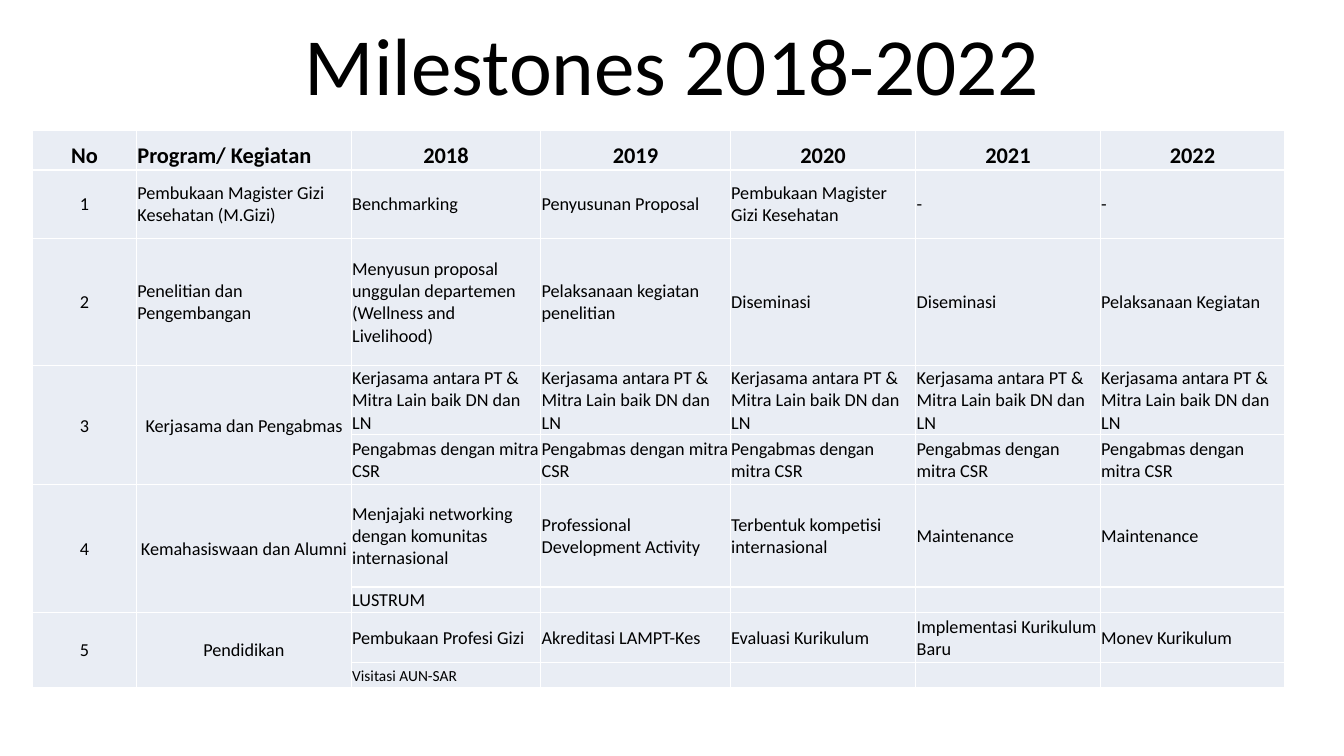
"""Build the Milestones 2018-2022 programme table slide."""
from dataclasses import dataclass

from lxml.etree import SubElement
from pptx import Presentation
from pptx.dml.color import RGBColor
from pptx.enum.text import MSO_ANCHOR, PP_ALIGN
from pptx.oxml.ns import qn
from pptx.slide import Slide
from pptx.table import Table, _Cell
from pptx.text.text import _Paragraph
from pptx.util import Pt

FONT = "Calibri"
BLACK = "000000"
WHITE = "FFFFFF"
CELL_FILL = "E9EDF4"
BODY_SIZE = 13
YEARS = range(2018, 2023)
COLUMN_WIDTHS = [74.2, 153.4, 135.4, 135.4, 132.5, 131.8, 131.8]
HEADER_HEIGHT = 28


@dataclass(frozen=True)
class Activity:
    """One table row of yearly activities."""
    height: float
    yearly: list[str]
    size: float = BODY_SIZE


@dataclass(frozen=True)
class Program:
    """A numbered programme with one or more activity rows."""
    name: str
    activities: list[Activity]
    alignment: PP_ALIGN = PP_ALIGN.LEFT


PROGRAMS = [
    Program("Pembukaan Magister Gizi Kesehatan (M.Gizi)", [
        Activity(49, ["Benchmarking", "Penyusunan Proposal",
                      "Pembukaan Magister Gizi Kesehatan", "-", "-"]),
    ]),
    Program("Penelitian dan Pengembangan", [
        Activity(91, ["Menyusun proposal unggulan departemen (Wellness and Livelihood)",
                      "Pelaksanaan kegiatan penelitian", "Diseminasi", "Diseminasi",
                      "Pelaksanaan Kegiatan"]),
    ]),
    Program("Kerjasama dan Pengabmas", [
        Activity(49, ["Kerjasama antara PT & Mitra Lain baik DN dan LN"] * len(YEARS)),
        Activity(36, ["Pengabmas dengan mitra CSR"] * len(YEARS)),
    ], PP_ALIGN.CENTER),
    Program("Kemahasiswaan dan Alumni", [
        Activity(73, ["Menjajaki networking dengan komunitas internasional",
                      "Professional Development Activity",
                      "Terbentuk kompetisi internasional", "Maintenance", "Maintenance"]),
        Activity(18, ["LUSTRUM", "", "", "", ""]),
    ], PP_ALIGN.CENTER),
    Program("Pendidikan", [
        Activity(36, ["Pembukaan Profesi Gizi", "Akreditasi LAMPT-Kes", "Evaluasi Kurikulum",
                      "Implementasi Kurikulum Baru", "Monev Kurikulum"]),
        Activity(18, ["Visitasi AUN-SAR", "", "", "", ""], 11),
    ], PP_ALIGN.CENTER),
]


def color(value: str) -> RGBColor:
    """Turn a hex string into a colour."""
    return RGBColor.from_string(value)


def format_runs(paragraph: _Paragraph, size: float, bold: bool = False) -> None:
    """Give all runs of a paragraph the slide font."""
    for run in paragraph.runs:
        run.font.name = FONT
        run.font.size = Pt(size)
        run.font.bold = bold
        run.font.color.rgb = color(BLACK)


def style_cell(cell: _Cell) -> None:
    """Set the borders, fill, margins and empty-text size of a cell."""
    properties = cell._tc.get_or_add_tcPr()
    for side in ("lnL", "lnR", "lnT", "lnB"):
        line = SubElement(properties, qn(f"a:{side}"), w=str(Pt(1)))
        solid = SubElement(line, qn("a:solidFill"))
        SubElement(solid, qn("a:srgbClr"), val=WHITE)
    cell.fill.solid()
    cell.fill.fore_color.rgb = color(CELL_FILL)
    cell.margin_left = cell.margin_right = cell.margin_top = Pt(0.7)
    cell.margin_bottom = Pt(0)
    cell.vertical_anchor = MSO_ANCHOR.MIDDLE
    paragraph = cell.text_frame.paragraphs[0]
    SubElement(paragraph._p, qn("a:endParaRPr"), sz=str(BODY_SIZE * 100))


def write_cell(cell: _Cell, text: str, alignment: PP_ALIGN = PP_ALIGN.LEFT,
               size: float = BODY_SIZE, bold: bool = False) -> None:
    """Write formatted text into a cell."""
    if not text:
        return
    paragraph = cell.text_frame.paragraphs[0]
    paragraph.text = text
    paragraph.alignment = alignment
    format_runs(paragraph, size, bold)


def add_title(slide: Slide) -> None:
    """Add the centred slide title."""
    frame = slide.shapes.add_textbox(Pt(48), Pt(0), Pt(864), Pt(90)).text_frame
    frame.word_wrap = True
    frame.vertical_anchor = MSO_ANCHOR.MIDDLE
    frame.text = "Milestones 2018-2022"
    paragraph = frame.paragraphs[0]
    paragraph.alignment = PP_ALIGN.CENTER
    format_runs(paragraph, 58)


def fill_header(table: Table) -> None:
    """Write the heading row."""
    headings = ["No", "Program/ Kegiatan", *map(str, YEARS)]
    for column, heading in enumerate(headings):
        cell = table.cell(0, column)
        alignment = PP_ALIGN.LEFT if column == 1 else PP_ALIGN.CENTER
        write_cell(cell, heading, alignment, 16, True)
        cell.vertical_anchor = MSO_ANCHOR.BOTTOM


def fill_programs(table: Table) -> None:
    """Write the programmes and merge their number and name cells."""
    row = 1
    for number, program in enumerate(PROGRAMS, start=1):
        last_row = row + len(program.activities) - 1
        if last_row > row:
            for column in (0, 1):
                table.cell(row, column).merge(table.cell(last_row, column))
        write_cell(table.cell(row, 0), str(number), PP_ALIGN.CENTER)
        write_cell(table.cell(row, 1), program.name, program.alignment)
        for activity in program.activities:
            for column, text in enumerate(activity.yearly, start=2):
                write_cell(table.cell(row, column), text, size=activity.size)
            row += 1


def add_milestones(slide: Slide) -> None:
    """Add the milestone table."""
    heights = [HEADER_HEIGHT] + [
        activity.height for program in PROGRAMS for activity in program.activities]
    table = slide.shapes.add_table(
        len(heights), len(COLUMN_WIDTHS), Pt(23.3), Pt(93.4),
        Pt(sum(COLUMN_WIDTHS)), Pt(sum(heights))).table
    table.first_row = False
    table.horz_banding = False
    for column, width in zip(table.columns, COLUMN_WIDTHS):
        column.width = Pt(width)
    for row, height in zip(table.rows, heights):
        row.height = Pt(height)
    for cell in table.iter_cells():
        style_cell(cell)
    fill_header(table)
    fill_programs(table)


def main() -> None:
    """Create and save the presentation."""
    presentation = Presentation()
    presentation.slide_width = Pt(960)
    presentation.slide_height = Pt(540)
    slide = presentation.slides.add_slide(presentation.slide_layouts[6])
    add_title(slide)
    add_milestones(slide)
    presentation.save("out.pptx")


if __name__ == "__main__":
    main()
